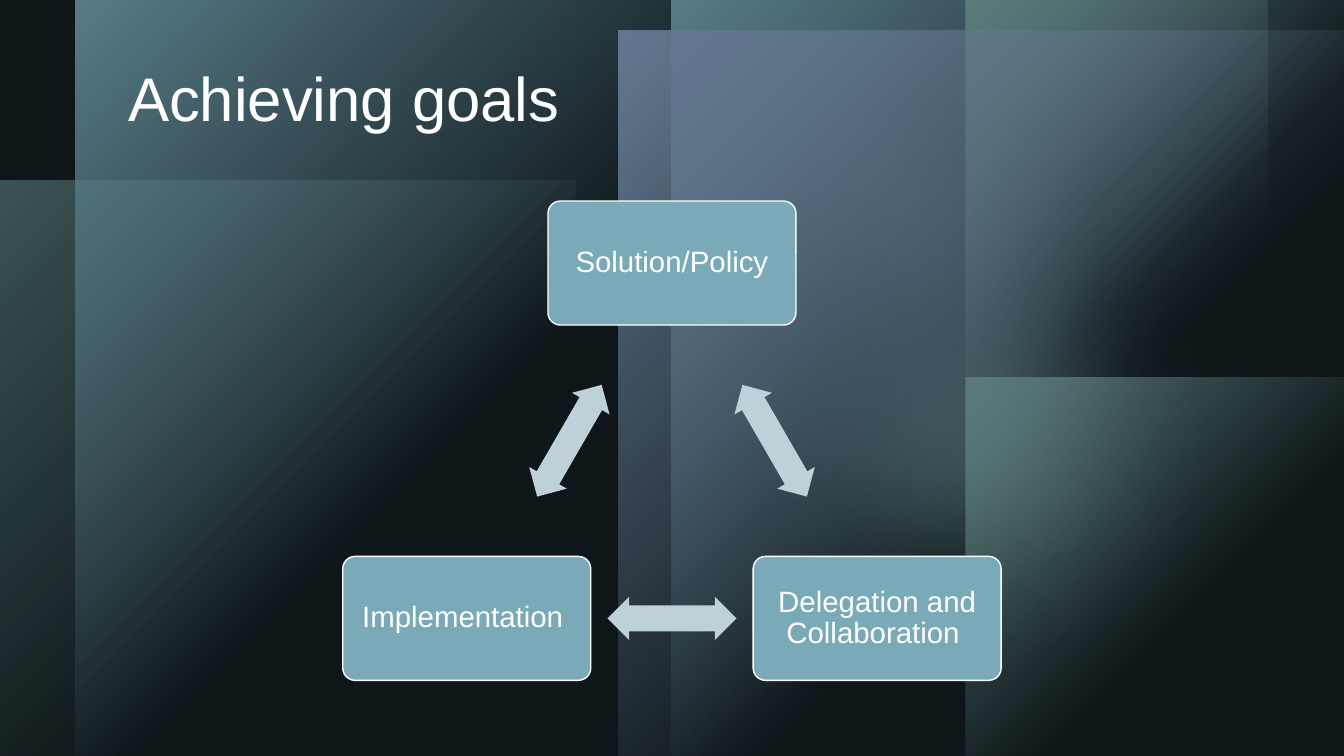
from dataclasses import dataclass
from math import cos, radians, sin

from lxml import etree
from pptx import Presentation
from pptx.dml.color import RGBColor
from pptx.enum.shapes import MSO_SHAPE
from pptx.enum.text import MSO_ANCHOR, MSO_AUTO_SIZE, PP_ALIGN
from pptx.oxml import parse_xml
from pptx.oxml.ns import nsdecls, qn
from pptx.util import Inches, Pt

RECT, OVAL = MSO_SHAPE.RECTANGLE, MSO_SHAPE.OVAL
ROUND, ARROW = MSO_SHAPE.ROUNDED_RECTANGLE, MSO_SHAPE.LEFT_RIGHT_ARROW
LEFT, CENTER = PP_ALIGN.LEFT, PP_ALIGN.CENTER
TOP, MIDDLE = MSO_ANCHOR.TOP, MSO_ANCHOR.MIDDLE
GROW = MSO_AUTO_SIZE.SHAPE_TO_FIT_TEXT


@dataclass(frozen=True)
class Theme:
    font: str = "Arial"
    head: int = 44
    body: int = 21
    back: str = "000000"
    text: str = "FFFFFF"
    teal: str = "7AA9B7"
    green: str = "80A9A1"
    blue: str = "8FA2C3"
    veil: str = "243841"
    arrow: str = "BED1D8"


theme = Theme()

# The grid has square cells: 13.33 columns by 7.5 rows
COLS, ROWS = 13.33, 7.5
CELL = Inches(1)

deck = Presentation()
deck.slide_width, deck.slide_height = int(COLS * CELL), int(ROWS * CELL)
slide = deck.slides.add_slide(deck.slide_layouts[5])
slide.background.fill.solid()
slide.background.fill.fore_color.rgb = RGBColor.from_string(theme.back)


def add_shape(kind, box, color, alpha=100, turn=0):
    """Add a borderless shape; box is column, row, width, height in cells."""
    shape = slide.shapes.add_shape(kind, *(int(n * CELL) for n in box))
    shape.rotation = turn
    shape.shadow.inherit = False
    shape.line.fill.background()
    shape.fill.solid()
    shape.fill.fore_color.rgb = RGBColor.from_string(color)
    if alpha < 100:
        tint = shape._element.spPr.find(".//" + qn("a:srgbClr"))
        etree.SubElement(tint, qn("a:alpha"), val=str(alpha * 1000))
    return shape


def add_text(frame, words, size, align, anchor):
    frame.word_wrap = True
    frame.vertical_anchor = anchor
    para = frame.paragraphs[0]
    para.alignment = align
    run = para.add_run()
    run.text = words
    run.font.name = theme.font
    run.font.size = Pt(size)
    run.font.color.rgb = RGBColor.from_string(theme.text)
    return para


# Backdrop: soft glows between panels that fade from one corner
half = ROWS / 2
edge = COLS - half
backdrop = [
    (RECT, (0, 1.79, 5.71, 5.71), theme.green, 60, 270, False),
    (OVAL, (6.98, 0, 4.72, 4.72), theme.blue, 96, 0, False),
    (OVAL, (6.69, 1.35, 6.02, 6.02), theme.green, 60, 0, False),
    (RECT, (6.66, 0, 5.91, ROWS), theme.teal, 100, 0, False),
    (RECT, (0.75, 0, 5.91, ROWS), theme.teal, 100, 0, True),
    (RECT, (edge, half, half, half), theme.green, 100, 90, False),
    (RECT, (edge, 0, half, half), theme.green, 100, 90, True),
    (RECT, (6.13, 0.3, 7.21, 7.21), theme.blue, 100, 180, False),
]
for kind, box, color, alpha, turn, flip in backdrop:
    shape = add_shape(kind, box, color, alpha, turn)
    props = shape._element.spPr
    if flip:
        props.find(qn("a:xfrm")).set("flipH", "1")
    if kind == OVAL:
        glow = props.find(qn("a:effectLst"))
        etree.SubElement(glow, qn("a:softEdge"), rad=str(Pt(100)))
        continue
    fade = parse_xml(
        f'<a:gradFill {nsdecls("a")} rotWithShape="1"><a:gsLst>'
        f'<a:gs pos="0"><a:srgbClr val="{color}">'
        f'<a:alpha val="{alpha * 1000}"/></a:srgbClr></a:gs>'
        f'<a:gs pos="60000"><a:srgbClr val="{color}">'
        '<a:alpha val="0"/></a:srgbClr></a:gs></a:gsLst>'
        '<a:path path="circle"><a:fillToRect r="100000" b="100000"/>'
        '</a:path></a:gradFill>')
    props.replace(props.find(qn("a:solidFill")), fade)
add_shape(RECT, (0, 0, COLS, ROWS), theme.veil, 40)

# Cycle: three steps on a ring, an arrow midway between neighbours
steps = ["Solution/Policy", "Delegation and Collaboration ", "Implementation "]
mid_x, mid_y, ring = COLS / 2, 4.96, 2.35
node_w, node_h = 2.46, 1.23
arrow_w, arrow_h = 1.28, 0.43
spots = []
for i in range(len(steps)):
    angle = radians(120 * i - 90)
    spots.append((mid_x + ring * cos(angle), mid_y + ring * sin(angle)))

for i, words in enumerate(steps):
    x, y = spots[i]
    box = (x - node_w / 2, y - node_h / 2, node_w, node_h)
    node = add_shape(ROUND, box, theme.teal)
    node.adjustments[0] = 0.1
    node.line.color.rgb = RGBColor.from_string(theme.text)
    node.line.width = Pt(1)
    frame = node.text_frame
    frame.margin_left = frame.margin_right = Inches(0.09)
    frame.margin_top = frame.margin_bottom = Inches(0.09)
    para = add_text(frame, words, theme.body, CENTER, MIDDLE)
    para.line_spacing = 0.9

    next_x, next_y = spots[(i + 1) % len(spots)]
    box = ((x + next_x - arrow_w) / 2, (y + next_y - arrow_h) / 2,
           arrow_w, arrow_h)
    arrow = add_shape(ARROW, box, theme.arrow, turn=60 + 120 * i)
    arrow.adjustments[0] = 0.6
    arrow.adjustments[1] = 0.5

# Title, in front of the backdrop
title = slide.shapes.title
title.left, title.top = int(1.17 * CELL), int(0.54 * CELL)
title.width, title.height = int(6.66 * CELL), int(0.84 * CELL)
add_text(title.text_frame, "Achieving goals", theme.head, LEFT, TOP)
title.text_frame.auto_size = GROW
slide.shapes._spTree.append(title._element)

deck.save("out.pptx")
